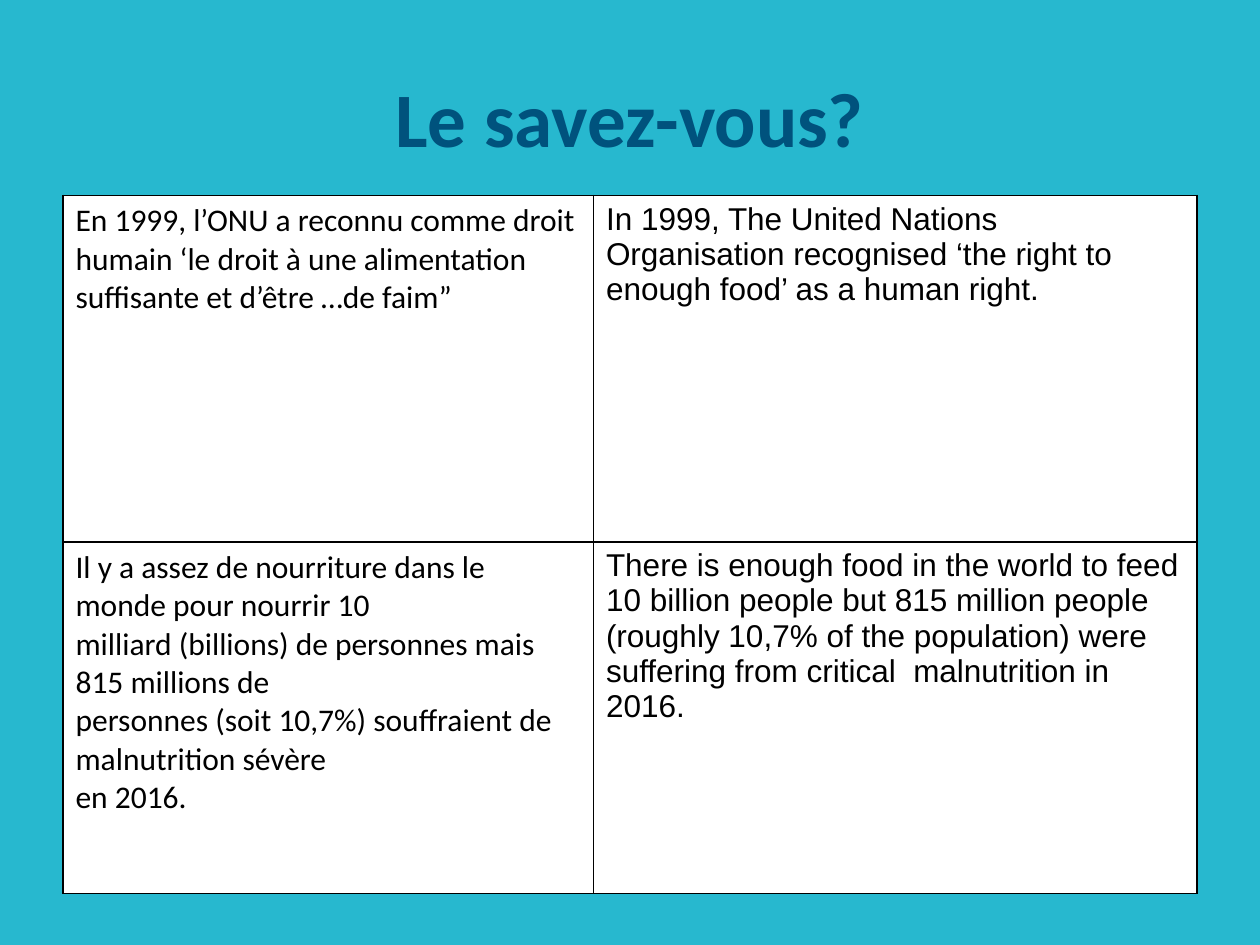
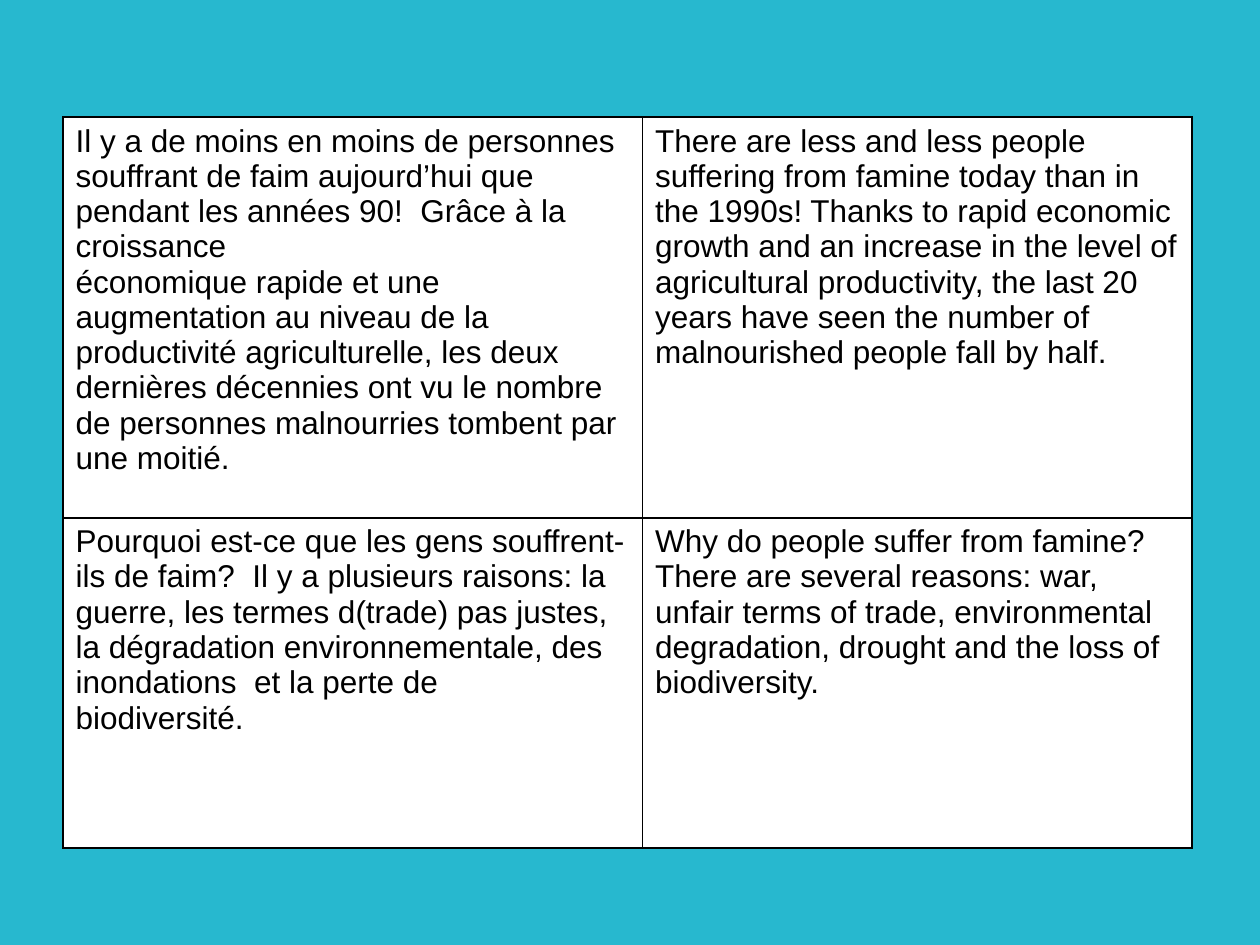
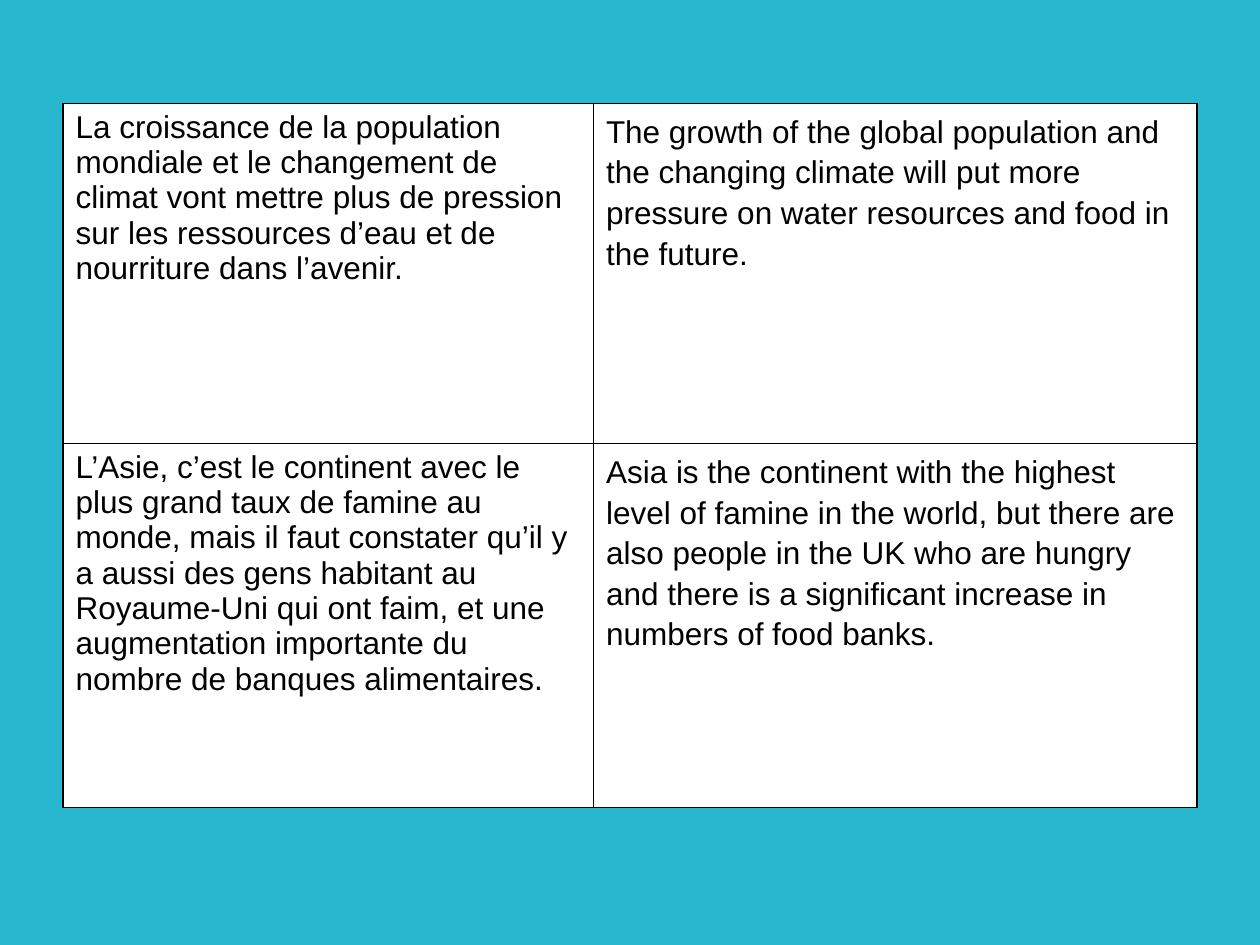
from dataclasses import dataclass

import pptx
import pptx.dml.color
import pptx.enum.text
import pptx.oxml.xmlchemy
import pptx.util
from lxml import etree
from pptx.oxml import ns

GRID_COLUMNS, GRID_ROWS = 100, 75
CELL = pptx.util.Inches(0.1)


@dataclass(frozen=True)
class Theme:
    background: str = "27B8CF"
    heading: str = "00527D"
    ink: str = "000000"
    paper: str = "FFFFFF"
    border: str = "000000"
    french_font: str = "Calibri"
    body_font: str = "Arial"
    heading_size: int = 44
    body_size: int = 18
    border_width: int = 1


@dataclass(frozen=True)
class Box:
    """A region measured in grid columns and rows."""
    column: float
    row: float
    columns: float
    rows: float

    def lengths(self):
        return [grid(n) for n in (self.column, self.row, self.columns, self.rows)]


THEME = Theme()
TITLE_BOX = Box(5, 3, 90, 12.5)


def grid(count):
    return pptx.util.Emu(round(count * CELL))


def rgb(code):
    return pptx.dml.color.RGBColor.from_string(code)


def write(frame, text, *, font=THEME.body_font, size=THEME.body_size,
          color=THEME.ink, bold=False, align=None, spacing=None, before=None):
    """Fill a text frame, one paragraph per line of text."""
    frame.word_wrap = True
    for number, line in enumerate(text.split("\n")):
        paragraph = frame.add_paragraph() if number else frame.paragraphs[0]
        paragraph.alignment = align
        if spacing:
            paragraph.line_spacing = spacing
        if before:
            paragraph.space_before = pptx.util.Pt(before)
        run = paragraph.add_run()
        run.text = line
        run.font.name = font
        run.font.size = pptx.util.Pt(size)
        run.font.bold = bold
        run.font.color.rgb = rgb(color)


def outline(cell):
    """Draw the four borders of a table cell."""
    properties = cell._tc.get_or_add_tcPr()
    for position, side in enumerate(("lnL", "lnR", "lnT", "lnB")):
        line = etree.Element(ns.qn(f"a:{side}"),
                             w=str(pptx.util.Pt(THEME.border_width)))
        fill = etree.SubElement(line, ns.qn("a:solidFill"))
        etree.SubElement(fill, ns.qn("a:srgbClr"), val=THEME.border)
        properties.insert(position, line)


def add_title(slide, box, text):
    frame = slide.shapes.add_textbox(*box.lengths()).text_frame
    frame.vertical_anchor = pptx.enum.text.MSO_ANCHOR.MIDDLE
    write(frame, text, font=THEME.french_font, size=THEME.heading_size,
          color=THEME.heading, bold=True, align=pptx.enum.text.PP_ALIGN.CENTER)


def add_translations(slide, box, french_columns, first_row, facts,
                     french=None, english=None):
    """Set French facts beside their English versions."""
    table = slide.shapes.add_table(len(facts), 2, *box.lengths()).table
    table.first_row = table.horz_banding = False
    for column, width in zip(table.columns, (french_columns, box.columns - french_columns)):
        column.width = grid(width)
    for row, height in zip(table.rows, (first_row, box.rows - first_row)):
        row.height = grid(height)
    formats = (french or {}, english or {})
    for row, fact in zip(table.rows, facts):
        for cell, text, style in zip(row.cells, fact, formats):
            cell.fill.solid()
            cell.fill.fore_color.rgb = rgb(THEME.paper)
            outline(cell)
            write(cell.text_frame, text, **style)


RIGHTS = [
    ("En 1999, l’ONU a reconnu comme droit humain ‘le droit à une alimentation "
     "suffisante et d’être …de faim”",
     "In 1999, The United Nations Organisation recognised ‘the right to enough "
     "food’ as a human right."),
    ("Il y a assez de nourriture dans le monde pour nourrir 10\n"
     "milliard (billions) de personnes mais 815 millions de\n"
     "personnes (soit 10,7%) souffraient de malnutrition sévère\n"
     "en 2016.",
     "There is enough food in the world to feed 10 billion people but 815 million "
     "people (roughly 10,7% of the population) were suffering from critical  "
     "malnutrition in 2016."),
]
CAUSES = [
    ("Il y a de moins en moins de personnes souffrant de faim aujourd’hui que "
     "pendant les années 90!  Grâce à la croissance\n"
     "économique rapide et une augmentation au niveau de la productivité "
     "agriculturelle, les deux dernières décennies ont vu le nombre de personnes "
     "malnourries tombent par une moitié.",
     "There are less and less people suffering from famine today than in the 1990s! "
     "Thanks to rapid economic growth and an increase in the level of agricultural "
     "productivity, the last 20 years have seen the number of malnourished people "
     "fall by half."),
    ("Pourquoi est-ce que les gens souffrent-ils de faim?  Il y a plusieurs raisons: "
     "la guerre, les termes d(trade) pas justes, la dégradation environnementale, "
     "des inondations  et la perte de\n"
     "biodiversité.",
     "Why do people suffer from famine?  There are several reasons: war, unfair "
     "terms of trade, environmental degradation, drought and the loss of "
     "biodiversity."),
]
FUTURE = [
    ("La croissance de la population mondiale et le changement de\n"
     "climat vont mettre plus de pression sur les ressources d’eau et de nourriture "
     "dans l’avenir.",
     "The growth of the global population and the changing climate will put more "
     "pressure on water resources and food in the future."),
    ("L’Asie, c’est le continent avec le plus grand taux de famine au monde, mais il "
     "faut constater qu’il y a aussi des gens habitant au Royaume-Uni qui ont faim, "
     "et une augmentation importante du nombre de banques alimentaires.",
     "Asia is the continent with the highest level of famine in the world, but there "
     "are also people in the UK who are hungry and there is a significant increase "
     "in numbers of food banks."),
]


def main():
    deck = pptx.Presentation()
    deck.slide_width, deck.slide_height = grid(GRID_COLUMNS), grid(GRID_ROWS)
    backdrop = deck.slide_master.background.fill
    backdrop.solid()
    backdrop.fore_color.rgb = rgb(THEME.background)
    blank = deck.slide_layouts[6]
    rights, causes, future = (deck.slides.add_slide(blank) for _ in range(3))

    add_title(rights, TITLE_BOX, "Le savez-vous?")
    add_translations(rights, Box(5, 15.5, 90, 55.4), 42.1, 27.5, RIGHTS,
                     french={"font": THEME.french_font})
    add_translations(causes, Box(5, 9.3, 89.6, 58), 46, 31.8, CAUSES)
    add_translations(future, Box(5, 8.2, 90, 55.9), 42.1, 27, FUTURE,
                     english={"spacing": 1.15, "before": 12})
    deck.save("out.pptx")


if __name__ == "__main__":
    main()
